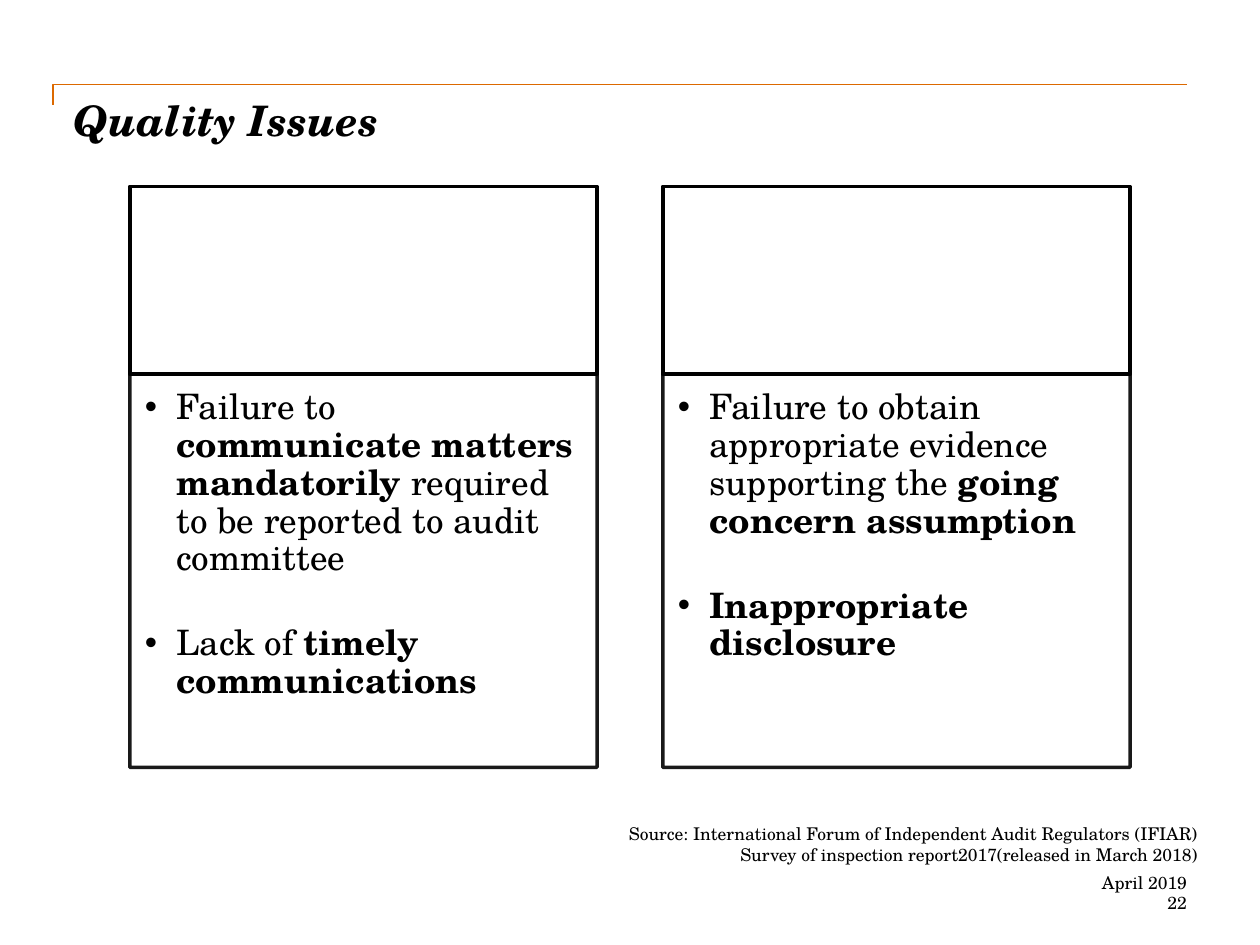
from pptx import Presentation
from pptx.dml.color import RGBColor
from pptx.enum.shapes import MSO_SHAPE
from pptx.enum.text import MSO_ANCHOR, MSO_AUTO_SIZE, PP_ALIGN
from pptx.oxml.ns import qn
from pptx.util import Inches, Pt
from lxml import etree

RECTANGLE = MSO_SHAPE.RECTANGLE
TOP = MSO_ANCHOR.TOP
NO_AUTOFIT = MSO_AUTO_SIZE.NONE
LEFT, RIGHT = PP_ALIGN.LEFT, PP_ALIGN.RIGHT

BLACK = RGBColor(0x00, 0x00, 0x00)
WHITE = RGBColor(0xFF, 0xFF, 0xFF)
ORANGE = RGBColor(0xDC, 0x69, 0x00)
FONT = "TeX Gyre Schola"

COLUMN_LEFT, COLUMN_STEP, COLUMN_WIDTH = 1.03, 4.23, 3.71
HEADER_TOP, HEADER_HEIGHT = 1.48, 1.49
LIST_TOP, LIST_HEIGHT = HEADER_TOP + HEADER_HEIGHT, 3.12
LIST_INDENT = Inches(0.25)

ISSUES = [
    [
        [("Failure to ", False), ("communicate matters mandatorily", True),
         (" required to be reported to audit committee", False)],
        [("Lack of ", False), ("timely communications", True)],
    ],
    [
        [("Failure to obtain appropriate evidence supporting the ", False),
         ("going concern assumption", True)],
        [("Inappropriate disclosure", True)],
    ],
]

FOOTER = [
    (3.92, 6.53, 5.58, 0.42,
     ["Source: International Forum of Independent Audit Regulators (IFIAR)",
      "Survey of inspection report2017(released in March 2018)"]),
    (7.75, 6.92, 1.67, 0.17, ["April 2019"]),
    (7.75, 7.08, 1.67, 0.17, ["22"]),
]


def place(shape, left, top, width, height):
    shape.left, shape.top = Inches(left), Inches(top)
    shape.width, shape.height = Inches(width), Inches(height)


def format_frame(text_frame, margins=(0, 0, 0, 0)):
    text_frame.word_wrap = True
    text_frame.auto_size = NO_AUTOFIT
    text_frame.vertical_anchor = TOP
    (text_frame.margin_left, text_frame.margin_top,
     text_frame.margin_right, text_frame.margin_bottom) = map(Inches, margins)


def format_run(run, size, bold=False, italic=False):
    run.font.name = FONT
    run.font.size = Pt(size)
    run.font.bold = bold
    run.font.italic = italic
    run.font.color.rgb = BLACK


def format_box(shape):
    shape.fill.solid()
    shape.fill.fore_color.rgb = WHITE
    shape.line.color.rgb = BLACK
    shape.line.width = Pt(2)


def set_opacity(shape, percent):
    for color in shape.element.spPr.iter(qn("a:srgbClr")):
        etree.SubElement(color, qn("a:alpha"), val=str(percent * 1000))


def add_title_rule(slide):
    builder = slide.shapes.build_freeform(Inches(0.42), Inches(0.83))
    corners = [(0.42, 0.67), (9.42, 0.67)]
    builder.add_line_segments([(Inches(x), Inches(y)) for x, y in corners], close=False)
    rule = builder.convert_to_shape()
    rule.shadow.inherit = False
    rule.fill.background()
    rule.line.color.rgb = ORANGE
    rule.line.width = Pt(1)


def set_title(slide, text):
    title = slide.shapes.title
    place(title, 0.58, 0.75, 8.83, 1)
    title.text_frame.text = text
    format_frame(title.text_frame)
    paragraph = title.text_frame.paragraphs[0]
    paragraph.alignment = LEFT
    format_run(paragraph.runs[0], 24, bold=True, italic=True)


def add_header_box(slide, left):
    header = slide.shapes.add_shape(
        RECTANGLE, Inches(left), Inches(HEADER_TOP),
        Inches(COLUMN_WIDTH), Inches(HEADER_HEIGHT))
    header.shadow.inherit = False
    format_box(header)


def fill_list(body, left, items):
    place(body, left, LIST_TOP, COLUMN_WIDTH, LIST_HEIGHT)
    format_box(body)
    set_opacity(body, 90)
    text_frame = body.text_frame
    format_frame(text_frame, (0.12, 0.12, 0.16, 0.17))
    for index, item in enumerate(items):
        paragraph = text_frame.add_paragraph() if index else text_frame.paragraphs[0]
        paragraph.line_spacing = 0.9
        paragraph.space_before = Pt(27 if index else 0)
        properties = paragraph._p.get_or_add_pPr()
        properties.set("marL", str(LIST_INDENT))
        properties.set("indent", str(-LIST_INDENT))
        for text, bold in item:
            run = paragraph.add_run()
            run.text = text
            format_run(run, 20, bold)


def add_footer_text(slide, left, top, width, height, lines):
    text_box = slide.shapes.add_textbox(*map(Inches, (left, top, width, height)))
    text_frame = text_box.text_frame
    text_frame.text = "\n".join(lines)
    format_frame(text_frame)
    for paragraph in text_frame.paragraphs:
        paragraph.alignment = RIGHT
        format_run(paragraph.runs[0], 10)


def main():
    presentation = Presentation()
    presentation.slide_width = Inches(10)
    presentation.slide_height = Inches(7.5)
    slide = presentation.slides.add_slide(presentation.slide_layouts[3])
    add_title_rule(slide)
    set_title(slide, "Quality Issues")
    for column, items in enumerate(ISSUES):
        left = COLUMN_LEFT + column * COLUMN_STEP
        add_header_box(slide, left)
        fill_list(slide.placeholders[column + 1], left, items)
    for entry in FOOTER:
        add_footer_text(slide, *entry)
    presentation.save("out.pptx")


if __name__ == "__main__":
    main()
